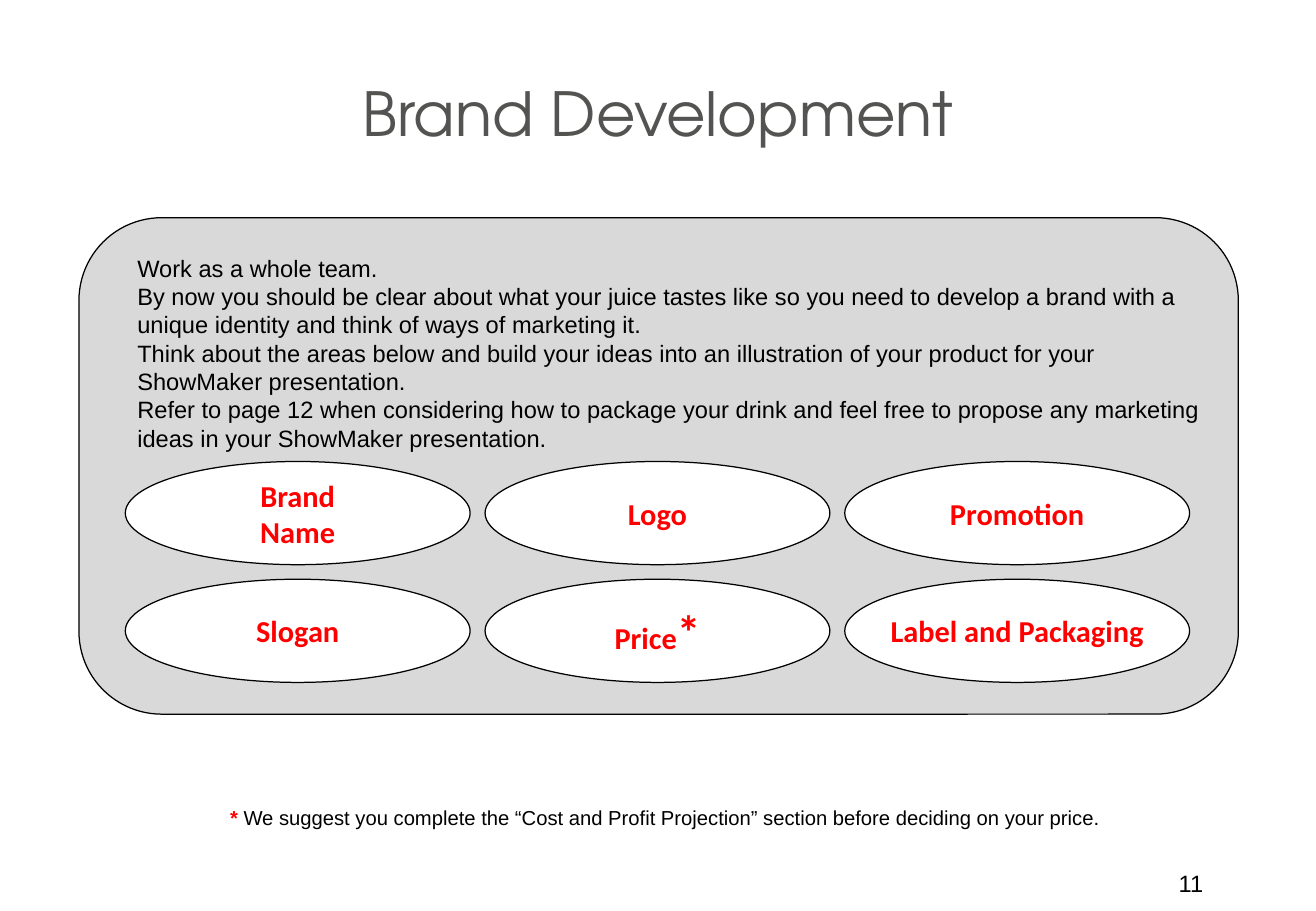
import pptx
import pptx.util
import pptx.dml.color
import pptx.enum.shapes
import pptx.enum.text

WIDE, HIGH = 10.83, 7.5
HUES = {"ink": "000000", "title": "535451", "panel": "D9D9D9",
        "oval": "FFFFFF", "key": "FF0000"}
KINDS = pptx.enum.shapes.MSO_SHAPE
ALIGN = pptx.enum.text.PP_ALIGN
ANCHOR = pptx.enum.text.MSO_ANCHOR

# Text formats
BODY = {"name": "Arial", "size": 14, "color": "ink"}
NOTE = {**BODY, "size": 12}
STAR = {**NOTE, "color": "key", "bold": True}
HEAD = {"name": "TeX Gyre Adventor", "size": 36, "color": "title"}
LABEL = {"name": "Calibri", "size": 18, "color": "key", "bold": True}
MARK = {**LABEL, "size": 28}

TASK = [
    "Work as a whole team.",
    "By now you should be clear about what your juice tastes like so you need "
    "to develop a brand with a unique identity and think of ways of marketing it.",
    "Think about the areas below and build your ideas into an illustration of "
    "your product for your ShowMaker presentation.",
    "Refer to page 12 when considering how to package your drink and feel free "
    "to propose any marketing ideas in your ShowMaker presentation.",
]
AREAS = [
    [[[("Brand", LABEL)], [("Name", LABEL)]],
     [[("Logo", LABEL)]],
     [[("Promotion", LABEL)]]],
    [[[("Slogan", LABEL)]],
     [[("Price", LABEL), ("*", MARK)]],
     [[("Label and Packaging", LABEL)]]],
]


def hue(name):
    return pptx.dml.color.RGBColor.from_string(HUES[name])


def part(box, x, y, w, h):
    """Turn shares of a box into a box in inches."""
    left, top, wide, high = box
    return left + x * wide, top + y * high, w * wide, h * high


def place(box):
    return [pptx.util.Inches(size) for size in box]


def style(font, form):
    for key, value in form.items():
        if key == "color":
            font.color.rgb = hue(value)
        elif key == "size":
            font.size = pptx.util.Pt(value)
        else:
            setattr(font, key, value)


def write(frame, paras, align=ALIGN.LEFT, anchor=ANCHOR.TOP, wrap=True):
    frame.word_wrap = wrap
    frame.vertical_anchor = anchor
    for num, runs in enumerate(paras):
        para = frame.add_paragraph() if num else frame.paragraphs[0]
        para.alignment = align
        for words, form in runs:
            run = para.add_run()
            run.text = words
            style(run.font, form)


def text(slide, box, paras, **look):
    write(slide.shapes.add_textbox(*place(box)).text_frame, paras, **look)


def shape(slide, kind, box, fill):
    item = slide.shapes.add_shape(kind, *place(box))
    item.shadow.inherit = False
    item.fill.solid()
    item.fill.fore_color.rgb = hue(fill)
    item.line.color.rgb = hue("ink")
    item.line.width = pptx.util.Pt(0.75)
    return item


def grid(slide, box):
    """Ovals in equal columns and rows, with gaps between them."""
    wide, high = 0.324, 0.467
    for row, line in enumerate(AREAS):
        for col, paras in enumerate(line):
            spot = part(box, col * (1 - wide) / 2, row * (1 - high), wide, high)
            oval = shape(slide, KINDS.OVAL, spot, "oval")
            write(oval.text_frame, paras, ALIGN.CENTER, ANCHOR.MIDDLE, False)


def panel(slide, box):
    """Grey panel with the task and the areas to work on."""
    shape(slide, KINDS.FLOWCHART_ALTERNATE_PROCESS, box, "panel")
    text(slide, part(box, 0.04, 0.06, 0.954, 0.49),
         [[(words, BODY)] for words in TASK])
    grid(slide, part(box, 0.04, 0.491, 0.918, 0.445))


def foot(slide, box):
    """Note on the price and the page number."""
    text(slide, part(box, 0.12, 0, 0.85, 0.33),
         [[("* ", STAR),
           ("We suggest you complete the “Cost and Profit Projection” section "
            "before deciding on your price.", NOTE)]], anchor=ANCHOR.MIDDLE)
    text(slide, part(box, 0.72, 0.57, 0.26, 0.43), [[("11", BODY)]],
         align=ALIGN.RIGHT)


def main():
    deck = pptx.Presentation()
    deck.slide_width, deck.slide_height = place((WIDE, HIGH))
    slide = deck.slides.add_slide(deck.slide_layouts[6])
    page = (0, 0, WIDE, HIGH)
    text(slide, part(page, 0.05, 0.077, 0.9, 0.18),
         [[("Brand Development", HEAD)]], align=ALIGN.CENTER)
    panel(slide, part(page, 0.06, 0.239, 0.881, 0.545))
    foot(slide, part(page, 0.06, 0.877, 0.881, 0.123))
    deck.save("out.pptx")


if __name__ == "__main__":
    main()
